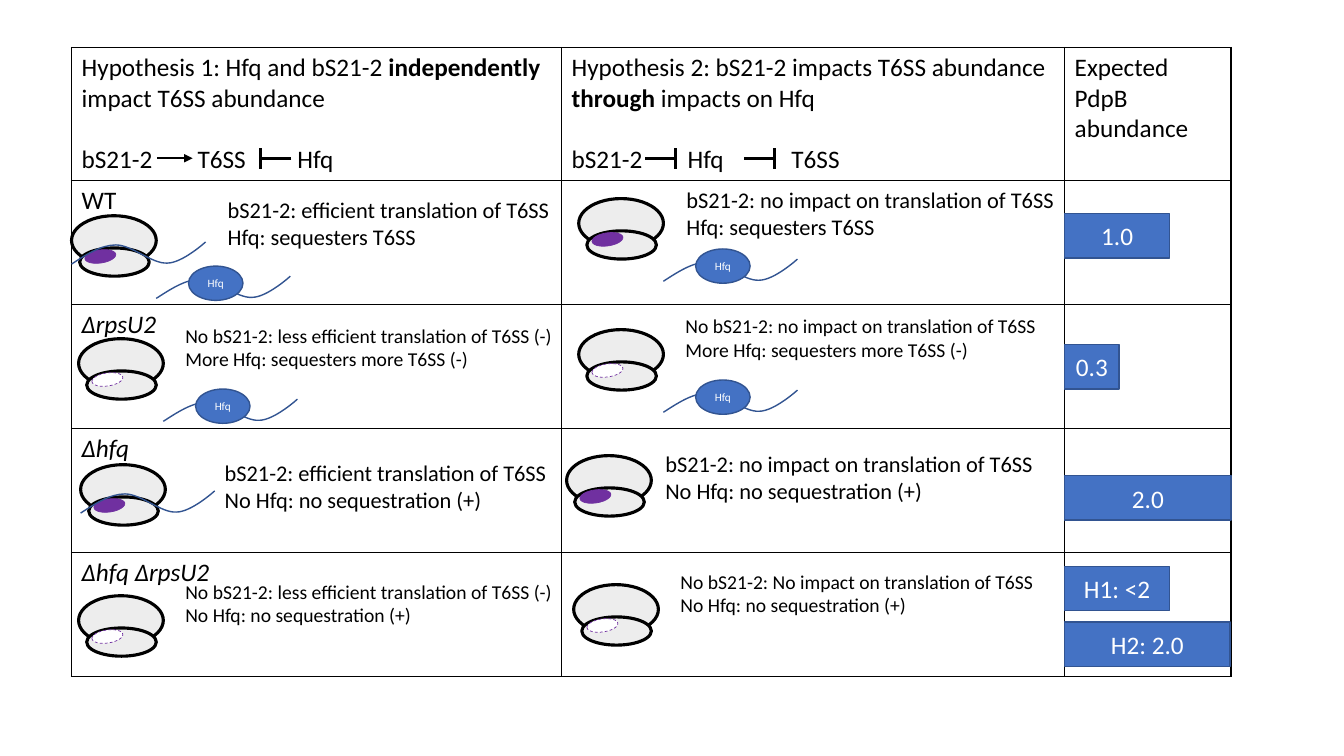
from dataclasses import dataclass
from itertools import accumulate

from lxml import etree
from pptx import Presentation
from pptx.dml.color import RGBColor
from pptx.enum import dml, shapes, text
from pptx.oxml import ns
from pptx.util import Inches, Pt


@dataclass(frozen=True)
class Theme:
    font: str = "Calibri"
    ink: str = "000000"
    paper: str = "FFFFFF"
    subunit: str = "EDEDED"
    protein: str = "7030A0"
    blue: str = "4472C4"
    blue_edge: str = "325491"
    body: int = 18
    note: int = 16
    small_note: int = 14
    label: int = 8


T = Theme()
LEFT, TOP = 0.71, 0.47
COLS = [4.86, 4.99, 1.65]
ROWS = [1.31] + [1.23] * 4
COL_X = list(accumulate(COLS, initial=LEFT))
ROW_Y = list(accumulate(ROWS, initial=TOP))

# Header cells: title runs (text, bold), pathway and its tab stops
HEADERS = [
    ([("Hypothesis 1: Hfq and bS21-2 ", False), ("independently ", True),
      ("impact T6SS abundance", False)], "bS21-2\tT6SS\tHfq", (1.15, 2.14)),
    ([("Hypothesis 2: bS21-2 impacts T6SS abundance ", False), ("through ", True),
      ("impacts on Hfq", False)], "bS21-2\tHfq\tT6SS", (1.15, 2.18)),
    ([("Expected PdpB abundance", False)], None, ()),
]
STRAINS = ["WT", "ΔrpsU2", "Δhfq", "Δhfq ΔrpsU2"]

EFFICIENT = "bS21-2: efficient translation of T6SS"
LESS = "No bS21-2: less efficient translation of T6SS (-)"
NO_IMPACT = "bS21-2: no impact on translation of T6SS"
SEQUESTERS = "Hfq: sequesters T6SS"
MORE = "More Hfq: sequesters more T6SS (-)"
NO_HFQ = "No Hfq: no sequestration (+)"

# Row, column, ribosome offset in cell, note offset from ribosome, note lines,
# then the parts that are present: bS21-2, T6SS mRNA on the ribosome, Hfq
SCENES = [
    (1, 0, (0, 0.36), (1.45, -0.24), (EFFICIENT, SEQUESTERS), True, True, True),
    (1, 1, (0.17, 0.19), (0.97, -0.17), (NO_IMPACT, SEQUESTERS), True, False, True),
    (2, 0, (0.07, 0.35), (0.96, -0.2), (LESS, MORE), False, False, True),
    (2, 1, (0.17, 0.26), (0.96, -0.2), ("No " + NO_IMPACT, MORE), False, False, True),
    (3, 0, (0.09, 0.37), (1.33, -0.1), (EFFICIENT, NO_HFQ), True, True, False),
    (3, 1, (0.05, 0.28), (0.88, -0.1), (NO_IMPACT, NO_HFQ), True, False, False),
    (4, 0, (0.07, 0.44), (0.96, -0.21), (LESS, NO_HFQ), False, False, False),
    (4, 1, (0.12, 0.33), (0.96, -0.2),
     ("No bS21-2: No impact on translation of T6SS", NO_HFQ), False, False, False),
]
# Row, offset from row top, width, label
BARS = [(1, 0.34, 1.04, "1.0"), (2, 0.41, 0.54, "0.3"), (3, 0.48, 1.65, "2.0"),
        (4, 0.15, 1.04, "H1: <2"), (4, 0.7, 1.64, "H2: 2.0")]
# One mRNA strand: its start, then three Bezier curves
STRAND_START, STRAND_END = (0, 0.22), (1.33, 0)
STRAND_CURVES = [((0.14, 0.13), (0.29, 0.03), (0.44, 0.03)),
                 ((0.6, 0.03), (0.8, 0.22), (0.95, 0.21)),
                 ((1.1, 0.21), (1.33, 0), STRAND_END)]


def rgb(color):
    return RGBColor.from_string(color)


def box(x, y, w, h):
    return [Inches(v) for v in (x, y, w, h)]


def write(paragraph, words, size, color=T.ink, bold=False, italic=False):
    run = paragraph.add_run()
    run.text = words
    font = run.font
    font.name, font.size, font.bold, font.italic = T.font, Pt(size), bold, italic
    font.color.rgb = rgb(color)


def shape(parts, kind, place, fill, edge, width, label=None, size=T.body):
    item = parts.add_shape(kind, *box(*place))
    item.shadow.inherit = False
    item.fill.solid()
    item.fill.fore_color.rgb = rgb(fill)
    item.line.color.rgb = rgb(edge)
    item.line.width = Pt(width)
    if label:
        frame = item.text_frame
        frame.margin_left = frame.margin_right = 0
        frame.margin_top = frame.margin_bottom = 0
        frame.vertical_anchor = text.MSO_ANCHOR.MIDDLE
        frame.paragraphs[0].alignment = text.PP_ALIGN.CENTER
        write(frame.paragraphs[0], label, size, T.paper)
    return item


def line(parts, x1, y1, x2, y2, width, arrow=False):
    link = parts.add_connector(shapes.MSO_CONNECTOR.STRAIGHT, *box(x1, y1, x2, y2))
    link.line.color.rgb = rgb(T.ink)
    link.line.width = Pt(width)
    props = link.element.spPr
    if arrow:
        etree.SubElement(props.find(ns.qn("a:ln")), ns.qn("a:tailEnd"), type="triangle")
    etree.SubElement(props, ns.qn("a:effectLst"))


def inhibition(slide, x1, x2, y):
    parts = slide.shapes.add_group_shape().shapes
    line(parts, x1, y, x2, y, 2.25)
    line(parts, x2, y - 0.1, x2, y + 0.11, 2.25)


def strand(parts, x, y):
    start, end = [(Inches(x + dx), Inches(y + dy)) for dx, dy in (STRAND_START, STRAND_END)]
    builder = parts.build_freeform(*start, scale=1.0)
    builder.add_line_segments([end], close=False)
    mrna = builder.convert_to_shape()
    # Bend the straight segment into the curves
    segment = next(mrna.element.iter(ns.qn("a:lnTo")))
    outline = segment.getparent()
    outline.remove(segment)
    for curve in STRAND_CURVES:
        bend = etree.SubElement(outline, ns.qn("a:cubicBezTo"))
        for px, py in curve:
            etree.SubElement(bend, ns.qn("a:pt"), x=str(Inches(px)), y=str(Inches(py)))
    mrna.shadow.inherit = False
    mrna.fill.background()
    mrna.line.color.rgb = rgb(T.blue_edge)
    mrna.line.width = Pt(1)


def scene(slide, x, y, note_width, note_offset, notes, has_bs21, has_mrna, has_hfq):
    parts = slide.shapes.add_group_shape().shapes
    oval = shapes.MSO_SHAPE.OVAL
    # Ribosome
    shape(parts, oval, (x, y, 0.84, 0.49), T.subunit, T.ink, 2.25)
    shape(parts, oval, (x + 0.08, y + 0.32, 0.69, 0.28), T.subunit, T.ink, 2.25)
    bs21 = shape(parts, oval, (x + 0.13, y + 0.34, 0.31, 0.13),
                 T.protein if has_bs21 else T.paper, T.protein, 0.5)
    bs21.rotation = 351.6
    if not has_bs21:
        bs21.line.dash_style = dml.MSO_LINE.DASH
    # Explanation
    size, width, height = (T.note, note_width, 0.64) if has_bs21 else (T.small_note, 4.13, 0.57)
    frame = parts.add_textbox(*box(x + note_offset[0], y + note_offset[1], width, height)).text_frame
    frame.word_wrap = True
    frame.auto_size = text.MSO_AUTO_SIZE.SHAPE_TO_FIT_TEXT
    for i, note in enumerate(notes):
        write(frame.add_paragraph() if i else frame.paragraphs[0], note, size)
    # mRNA and Hfq
    if has_mrna:
        strand(parts, x, y + 0.26)
    if has_hfq:
        strand(parts, x + 0.84, y + 0.6)
        shape(parts, oval, (x + 1.16, y + 0.5, 0.54, 0.34), T.blue, T.blue_edge, 1, "Hfq", T.label)


def border(cell):
    props = cell._tc.get_or_add_tcPr()
    for i, side in enumerate(("lnL", "lnR", "lnT", "lnB")):
        edge = etree.Element(ns.qn("a:" + side), w=str(Pt(1)))
        fill = etree.SubElement(edge, ns.qn("a:solidFill"))
        etree.SubElement(fill, ns.qn("a:srgbClr"), val=T.ink)
        props.insert(i, edge)


def hypothesis_table(slide):
    grid = slide.shapes.add_table(len(ROWS), len(COLS),
                                  *box(LEFT, TOP, sum(COLS), sum(ROWS))).table
    grid.first_row = grid.horz_banding = False
    for column, width in zip(grid.columns, COLS):
        column.width = Inches(width)
    for row, height in zip(grid.rows, ROWS):
        row.height = Inches(height)
    for cell in grid.iter_cells():
        cell.fill.background()
        border(cell)
    for c, (title, pathway, stops) in enumerate(HEADERS):
        frame = grid.cell(0, c).text_frame
        for words, bold in title:
            write(frame.paragraphs[0], words, T.body, bold=bold)
        if pathway:
            chain = frame.add_paragraph()
            chain.space_before = Pt(22)
            tabs = etree.SubElement(chain._p.get_or_add_pPr(), ns.qn("a:tabLst"))
            for stop in stops:
                etree.SubElement(tabs, ns.qn("a:tab"), pos=str(Inches(stop)), algn="l")
            write(chain, pathway, T.body)
    for r, strain in enumerate(STRAINS, 1):
        write(grid.cell(r, 0).text_frame.paragraphs[0], strain, T.body, italic=r > 1)


def pathways(slide, y):
    for start in (1.81, 0.83):
        inhibition(slide, COL_X[1] + start, COL_X[1] + start + 0.3, y)
    line(slide.shapes, COL_X[0] + 0.85, y, COL_X[0] + 1.2, y, 1.5, arrow=True)
    inhibition(slide, COL_X[0] + 2.18, COL_X[0] + 1.87, y)


def abundance_bars(slide, x):
    for row, drop, width, label in BARS:
        shape(slide.shapes, shapes.MSO_SHAPE.RECTANGLE, (x, ROW_Y[row] + drop, width, 0.44),
              T.blue, T.blue_edge, 1, label)


def main():
    deck = Presentation()
    deck.slide_width, deck.slide_height = Inches(13.33), Inches(7.5)
    slide = deck.slides.add_slide(deck.slide_layouts[6])
    hypothesis_table(slide)
    pathways(slide, TOP + 1.1)
    for row, col, (dx, dy), *content in SCENES:
        scene(slide, COL_X[col] + dx, ROW_Y[row] + dy, (3.45, 3.95)[col], *content)
    abundance_bars(slide, COL_X[2])
    deck.save("out.pptx")


if __name__ == "__main__":
    main()
